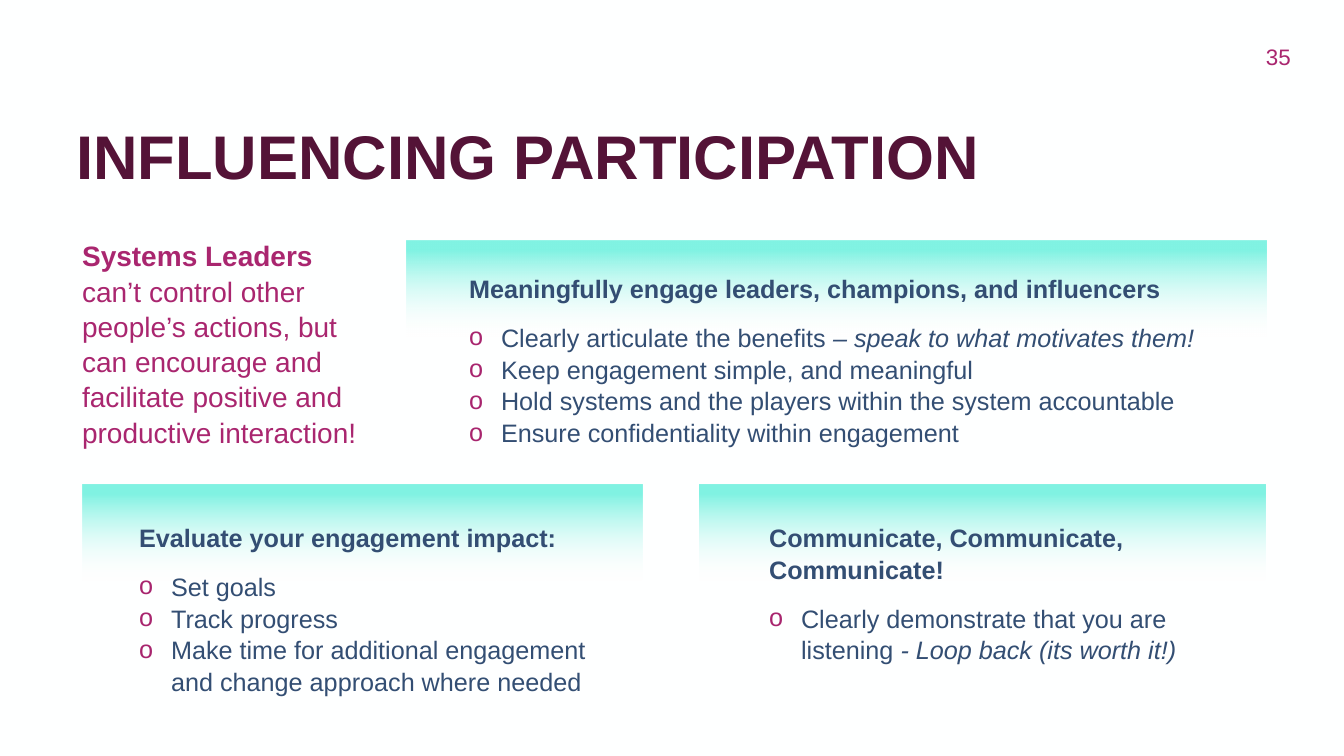
import pptx
import pptx.dml.color
import pptx.enum.shapes
import pptx.enum.text
import pptx.oxml.ns
import pptx.util
from lxml import etree

SCALE = 914400 / 100.8
FONT = "Arial"
PLUM, PINK, NAVY = "541337", "A9266F", "334E73"
WHITE, TEAL, DOT = "FEFFFF", "81F3E3", "A8256E"
STEP = 32

BANDS = [(407, 241, 860, 96), (83, 485, 559, 96), (700, 485, 565, 96)]

ASIDE = [
    "Systems Leaders",
    "can’t control other",
    "people’s actions, but",
    "can encourage and",
    "facilitate positive and productive interaction!",
]

# Text after a bar is set in italics; \v breaks a line.
LISTS = [
    ((459, 267, 770, 102), [
        "Meaningfully engage leaders, champions, and influencers",
        "Clearly articulate the benefits |– speak to what motivates them!",
        "Keep engagement simple, and meaningful",
        "Hold systems and the players within the system accountable",
        "Ensure confidentiality within engagement",
    ]),
    ((129, 516, 676, 163), [
        "Evaluate your engagement impact:",
        "Set goals",
        "Track progress",
        "Make time for additional engagement\vand change approach where needed",
    ]),
    ((759, 516, 476, 132), [
        "Communicate, Communicate, Communicate!",
        "Clearly demonstrate that you are listening |- Loop back (its worth it!)",
    ]),
]


def px(count):
    return pptx.util.Emu(round(count * SCALE))


def rgb(code):
    return pptx.dml.color.RGBColor.from_string(code)


def place(shape, box):
    shape.left, shape.top, shape.width, shape.height = map(px, box)


def add_node(parent, tag, **attrs):
    return etree.SubElement(parent, pptx.oxml.ns.qn(tag), attrs)


def style(para, size, color, bold=False):
    para.alignment = pptx.enum.text.PP_ALIGN.LEFT
    para.space_before = para.space_after = pptx.util.Pt(0)
    for run in para.runs:
        font = run.font
        font.name, font.size, font.bold = FONT, pptx.util.Pt(size), bold
        font.color.rgb = rgb(color)


def set_mark(para, mark=None):
    """Give the paragraph a hanging bullet, or no bullet at all."""
    props = para._p.get_or_add_pPr()
    indent = px(STEP) if mark else 0
    props.set("marL", str(indent))
    props.set("indent", str(-indent))
    if not mark:
        add_node(props, "a:buNone")
        return
    tint = add_node(props, "a:buClr")
    add_node(tint, "a:srgbClr", val=DOT)
    add_node(props, "a:buFont", typeface=FONT)
    add_node(props, "a:buChar", char=mark)


def set_frame(shape, box, anchor=pptx.enum.text.MSO_ANCHOR.TOP):
    place(shape, box)
    frame = shape.text_frame
    frame.word_wrap = True
    frame.auto_size = pptx.enum.text.MSO_AUTO_SIZE.NONE
    frame.vertical_anchor = anchor
    return frame


def add_band(slide, box):
    """Put a band that fades out downwards behind all text."""
    kind = pptx.enum.shapes.MSO_SHAPE.RECTANGLE
    band = slide.shapes.add_shape(kind, *map(px, box))
    band.shadow.inherit = False
    band.line.fill.background()
    band.fill.gradient()
    band.fill.gradient_angle = 90
    stops = band.fill.gradient_stops
    for stop, spot, color in zip(stops, (0, 0.9), (WHITE, TEAL)):
        stop.position = spot
        stop.color.rgb = rgb(color)
    clear = next(band.element.iter(pptx.oxml.ns.qn("a:srgbClr")))
    add_node(clear, "a:alpha", val="0")
    slide.shapes.element.insert(2, band.element)


def fill_title(shape):
    middle = pptx.enum.text.MSO_ANCHOR.MIDDLE
    frame = set_frame(shape, (66, 92, 1237, 126), middle)
    frame.text = "INFLUENCING PARTICIPATION"
    style(frame.paragraphs[0], 44, PLUM, True)


def fill_aside(shape):
    frame = set_frame(shape, (72, 232, 396, 126))
    frame.text = "\n".join(ASIDE)
    for row, para in enumerate(frame.paragraphs):
        style(para, 20, PINK, row == 0)
        para.line_spacing = 1.05
        set_mark(para)


def fill_list(shape, box, items):
    frame = set_frame(shape, box)
    frame.text = "\n".join(item.split("|")[0] for item in items)
    for row, (para, item) in enumerate(zip(frame.paragraphs, items)):
        tail = item.partition("|")[2]
        if tail:
            run = para.add_run()
            run.text = tail
            run.font.italic = True
        style(para, 18, NAVY, row == 0)
        para.line_spacing = 1.05
        if row == 0:
            para.space_after = pptx.util.Pt(12)
        set_mark(para, "o" if row else None)


def add_number(slide):
    box = (1256, 38, 80, 40)
    shape = slide.shapes.add_textbox(*map(px, box))
    frame = set_frame(shape, box)
    frame.text = "35"
    style(frame.paragraphs[0], 16, PINK)


def main():
    deck = pptx.Presentation()
    deck.slide_width, deck.slide_height = px(1344), px(756)
    slide = deck.slides.add_slide(deck.slide_layouts.get_by_name("Comparison"))
    back = slide.background.fill
    back.solid()
    back.fore_color.rgb = rgb(WHITE)

    title, aside, *bodies = slide.placeholders
    fill_title(title)
    fill_aside(aside)
    for body, (box, items) in zip(bodies, LISTS):
        fill_list(body, box, items)
    for box in BANDS:
        add_band(slide, box)
    add_number(slide)
    deck.save("out.pptx")


if __name__ == "__main__":
    main()
